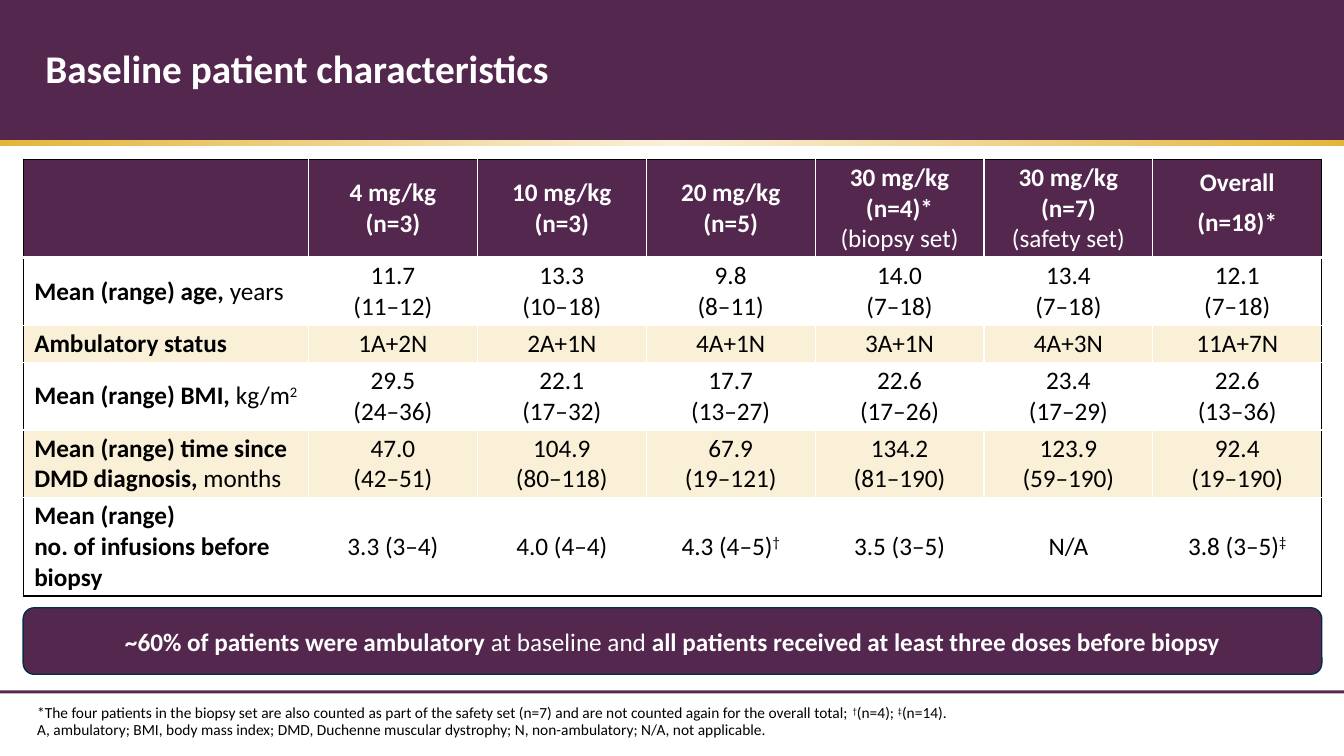
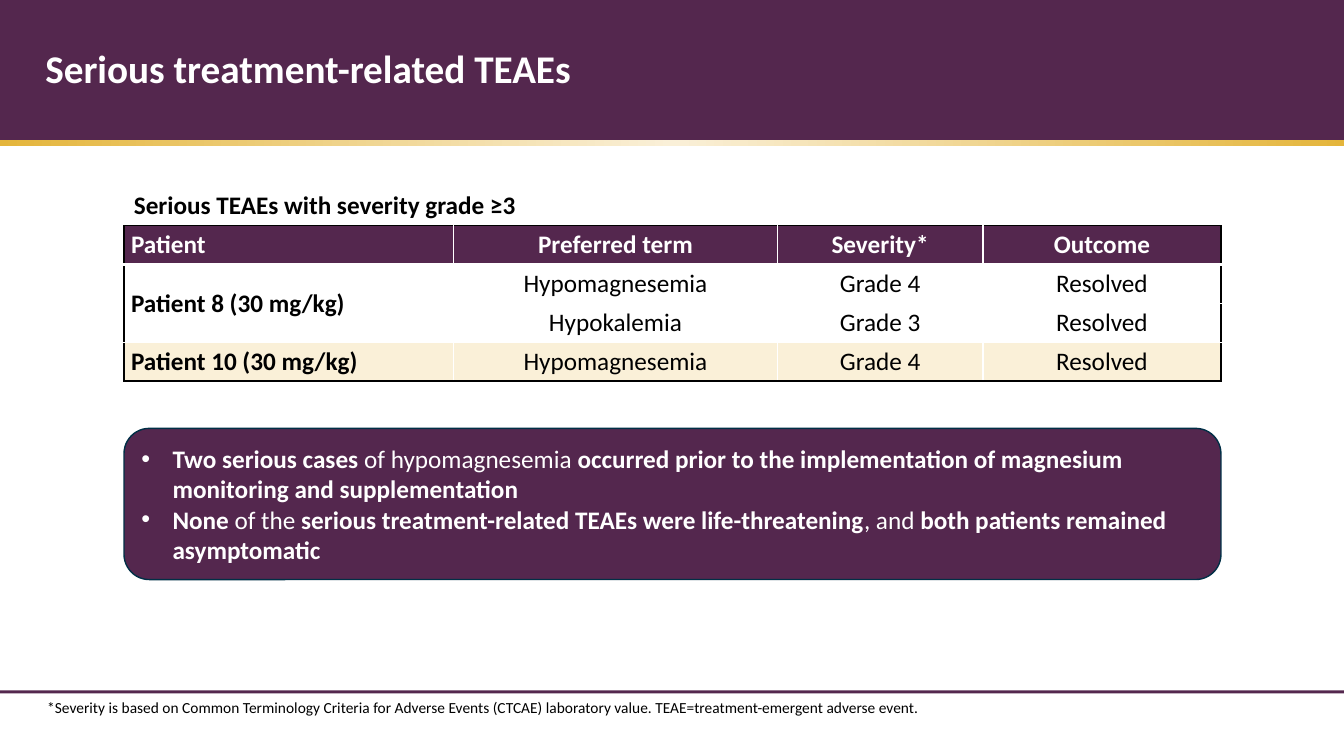
"""Build two clinical trial slides: baseline characteristics and serious adverse events."""
from copy import deepcopy
from dataclasses import dataclass

from pptx import Presentation
from pptx.dml.color import RGBColor
from pptx.enum.shapes import MSO_SHAPE
from pptx.enum.text import MSO_ANCHOR, MSO_AUTO_SIZE, PP_ALIGN
from pptx.oxml import parse_xml
from pptx.oxml.ns import nsdecls, qn
from pptx.util import Inches, Pt

PLUM, CREAM, GOLD, NAVY = "54274E", "FAF0D8", "E4B53B", "002F46"
WHITE, BLACK = "FFFFFF", "000000"
FONT = "Calibri"
SLIDE_WIDTH, SLIDE_HEIGHT = 13.33, 7.5


@dataclass(frozen=True)
class Box:
    left: float
    top: float
    width: float
    height: float

    def lengths(self) -> tuple:
        return tuple(Inches(n) for n in (self.left, self.top, self.width, self.height))


@dataclass(frozen=True)
class TableSpec:
    box: Box
    columns: list[float]
    heights: list[float]
    rows: list[list[str]]
    tinted_rows: set[int]
    side_margin: float
    end_margin: float


PATIENT_TABLE = TableSpec(
    box=Box(0.23, 1.58, 12.88, 4.33),
    columns=[2.83] + [(12.88 - 2.83) / 6] * 6,
    heights=[0.97, 0.67, 0.37, 0.67, 0.67, 0.97],
    rows=[
        ["", "|4 mg/kg\n|(n=3)", "|10 mg/kg\n|(n=3)", "|20 mg/kg\n|(n=5)",
         "|30 mg/kg\n|(n=4)*\n(biopsy set)", "|30 mg/kg\n|(n=7)\n(safety set)", "|Overall\n|(n=18)*"],
        ["|Mean (range) age, |years", "11.7\n(11–12)", "13.3\n(10–18)", "9.8\n(8–11)",
         "14.0\n(7–18)", "13.4\n(7–18)", "12.1\n(7–18)"],
        ["|Ambulatory status", "1A+2N", "2A+1N", "4A+1N", "3A+1N", "4A+3N", "11A+7N"],
        ["|Mean (range) BMI, |kg/m^2^", "29.5\n(24–36)", "22.1\n(17–32)", "17.7\n(13–27)",
         "22.6\n(17–26)", "23.4\n(17–29)", "22.6\n(13–36)"],
        ["|Mean (range) time since DMD diagnosis, |months", "47.0\n(42–51)", "104.9\n(80–118)",
         "67.9\n(19–121)", "134.2\n(81–190)", "123.9\n(59–190)", "92.4\n(19–190)"],
        ["|Mean (range)\n|no. of infusions before biopsy", "3.3 (3–4)", "4.0 (4–4)",
         "4.3 (4–5)^†^", "3.5 (3–5)", "N/A", "3.8 (3–5)^‡^"],
    ],
    tinted_rows={2, 4},
    side_margin=0.11,
    end_margin=0.03,
)

EVENT_TABLE = TableSpec(
    box=Box(1.23, 2.24, 10.88, 1.52),
    columns=[3.27, 3.21, 2.04, 2.36],
    heights=[0.38] * 4,
    rows=[
        ["|Patient", "|Preferred term", "|Severity*", "|Outcome"],
        ["|Patient 8 (30 mg/kg)", "Hypomagnesemia", "Grade 4", "Resolved"],
        ["", "Hypokalemia", "Grade 3", "Resolved"],
        ["|Patient 10 (30 mg/kg)", "Hypomagnesemia", "Grade 4", "Resolved"],
    ],
    tinted_rows={3},
    side_margin=0.07,
    end_margin=0.04,
)


def color(value: str) -> RGBColor:
    """Turn a hex string into a colour."""
    return RGBColor.from_string(value)


def add_bullet(paragraph, indent: float = 0.31) -> None:
    """Give a paragraph a round bullet and a hanging indent."""
    properties = paragraph._p.get_or_add_pPr()
    properties.set("marL", str(Inches(indent)))
    properties.set("indent", str(-Inches(indent)))
    properties.append(parse_xml(f'<a:buFont {nsdecls("a")} typeface="Arial"/>'))
    properties.append(parse_xml(f'<a:buChar {nsdecls("a")} char="•"/>'))


def write_text(text_frame, text: str, *, size: float = 18, fill: str = BLACK,
               align=PP_ALIGN.LEFT, anchor=MSO_ANCHOR.TOP, line_spacing=None,
               gap: float = 0, bullets: bool = False) -> None:
    """Write paragraphs in which | toggles bold and ^ toggles superscript."""
    text_frame.clear()
    text_frame.word_wrap = True
    text_frame.vertical_anchor = anchor
    for index, line in enumerate(text.split("\n")):
        paragraph = text_frame.add_paragraph() if index else text_frame.paragraphs[0]
        if bullets:
            add_bullet(paragraph)
        paragraph.alignment = align
        paragraph.line_spacing = line_spacing
        if index and gap:
            paragraph.space_before = Pt(gap)
        for bold_index, part in enumerate(line.split("|")):
            for raised_index, piece in enumerate(part.split("^")):
                if not piece:
                    continue
                run = paragraph.add_run()
                run.text = piece
                run.font.name = FONT
                run.font.size = Pt(size)
                run.font.bold = bold_index % 2 == 1
                run.font.color.rgb = color(fill)
                if raised_index % 2:
                    run._r.get_or_add_rPr().set("baseline", "30000")


def add_text_box(slide, box: Box, text: str, **text_format) -> None:
    """Add a wrapping text box."""
    write_text(slide.shapes.add_textbox(*box.lengths()).text_frame, text, **text_format)


def add_block(slide, box: Box, kind=MSO_SHAPE.RECTANGLE, line: str | None = None):
    """Add a flat plum shape, outlined if a line colour is given."""
    shape = slide.shapes.add_shape(kind, *box.lengths())
    shape.shadow.inherit = False
    shape.fill.solid()
    shape.fill.fore_color.rgb = color(PLUM)
    if line:
        shape.line.color.rgb = color(line)
        shape.line.width = Pt(1)
    else:
        shape.line.fill.background()
    return shape


def add_callout(slide, box: Box, text: str, **text_format) -> None:
    """Add a rounded plum box with white text."""
    callout = add_block(slide, box, MSO_SHAPE.ROUNDED_RECTANGLE, NAVY)
    write_text(callout.text_frame, text, fill=WHITE, anchor=MSO_ANCHOR.MIDDLE, **text_format)


def fill_gold_gradient(shape) -> None:
    """Fill a shape with gold that fades to cream in the middle."""
    shape.fill.gradient()
    shape.fill.gradient_angle = 0
    stop_list = next(shape.element.iter(qn("a:gsLst")))
    stop_list.append(deepcopy(stop_list[0]))
    for stop, position, value in zip(shape.fill.gradient_stops, (0, 0.5, 1), (GOLD, CREAM, GOLD)):
        stop.position = position
        stop.color.rgb = color(value)


def draw_shared_bands(slide) -> None:
    """Put the header, gold strip and footer rule on the slide's layout."""
    header = add_block(slide, Box(0, 0, SLIDE_WIDTH, 1.4))
    strip = add_block(slide, Box(0, 1.39, SLIDE_WIDTH, 0.06))
    fill_gold_gradient(strip)
    footer_rule = add_block(slide, Box(0, 6.85, SLIDE_WIDTH, 0.03))
    for position, shape in enumerate((header, strip, footer_rule), start=2):
        slide.slide_layout.shapes.element.insert(position, shape.element)


def add_titled_slide(presentation, title: str):
    """Add a title-only slide with a white title."""
    slide = presentation.slides.add_slide(presentation.slide_layouts[5])
    placeholder = slide.shapes.title
    placeholder.left, placeholder.top, placeholder.width, placeholder.height = Box(
        0.37, 0.41, 12.6, 0.58).lengths()
    text_frame = placeholder.text_frame
    text_frame.auto_size = MSO_AUTO_SIZE.NONE
    text_frame.margin_left = text_frame.margin_right = Inches(0.08)
    text_frame.margin_top = text_frame.margin_bottom = Inches(0.08)
    write_text(text_frame, f"|{title}", size=28, fill=WHITE,
               anchor=MSO_ANCHOR.MIDDLE, line_spacing=0.9)
    return slide


def set_border(cell, side: str, value: str, width: float = 1) -> None:
    """Draw one border of a cell."""
    cell._tc.get_or_add_tcPr().append(parse_xml(
        f'<a:ln{side} {nsdecls("a")} w="{Pt(width)}"><a:solidFill>'
        f'<a:srgbClr val="{value}"/></a:solidFill></a:ln{side}>'))


def add_table(slide, spec: TableSpec):
    """Add a table with a plum header, white inner lines and a black frame."""
    last_row, last_column = len(spec.rows) - 1, len(spec.columns) - 1
    table = slide.shapes.add_table(last_row + 1, last_column + 1, *spec.box.lengths()).table
    table.horz_banding = False
    for column, width in zip(table.columns, spec.columns):
        column.width = Inches(width)
    for row_index, texts in enumerate(spec.rows):
        table.rows[row_index].height = Inches(spec.heights[row_index])
        is_header = row_index == 0
        background = PLUM if is_header else CREAM if row_index in spec.tinted_rows else WHITE
        for column_index, text in enumerate(texts):
            cell = table.cell(row_index, column_index)
            set_border(cell, "L", WHITE if column_index else BLACK)
            set_border(cell, "R", BLACK if column_index == last_column else WHITE)
            set_border(cell, "T", BLACK if is_header else WHITE, 3 if row_index == 1 else 1)
            set_border(cell, "B", BLACK if row_index == last_row else WHITE, 3 if is_header else 1)
            cell.fill.solid()
            cell.fill.fore_color.rgb = color(background)
            cell.margin_left = cell.margin_right = Inches(spec.side_margin)
            cell.margin_top = cell.margin_bottom = Inches(spec.end_margin)
            cell.vertical_anchor = MSO_ANCHOR.MIDDLE
            write_text(cell.text_frame, text, fill=WHITE if is_header else BLACK,
                       align=PP_ALIGN.CENTER if column_index else PP_ALIGN.LEFT)
    return table


def build_baseline_slide(presentation) -> None:
    """Build the slide of baseline patient characteristics."""
    slide = add_titled_slide(presentation, "Baseline patient characteristics")
    draw_shared_bands(slide)
    add_callout(slide, Box(0.23, 6.03, 12.88, 0.66),
                "|~60% of patients were ambulatory |at baseline and "
                "|all patients received at least three doses before biopsy", align=PP_ALIGN.CENTER)
    table = add_table(slide, PATIENT_TABLE)
    write_text(table.cell(0, 6).text_frame, PATIENT_TABLE.rows[0][6], fill=WHITE,
               align=PP_ALIGN.CENTER, line_spacing=Pt(14), gap=14)
    add_text_box(slide, Box(0.27, 6.95, 9.87, 0.4),
                 "*The four patients in the biopsy set are also counted as part of the safety set (n=7) "
                 "and are not counted again for the overall total; ^†^(n=4); ^‡^(n=14).\n"
                 "A, ambulatory; BMI, body mass index; DMD, Duchenne muscular dystrophy; "
                 "N, non-ambulatory; N/A, not applicable.", size=11, line_spacing=0.9)


def build_events_slide(presentation) -> None:
    """Build the slide of serious treatment-related events."""
    slide = add_titled_slide(presentation, "Serious treatment-related TEAEs")
    add_callout(slide, Box(1.23, 4.25, 10.88, 1.5),
                "|Two serious cases |of hypomagnesemia |occurred prior to the implementation of "
                "magnesium monitoring and supplementation\n"
                "|None| of the |serious treatment-related TEAEs were life-threatening|, and "
                "|both patients remained asymptomatic", bullets=True)
    table = add_table(slide, EVENT_TABLE)
    table.cell(1, 0).merge(table.cell(2, 0))
    add_text_box(slide, Box(0.37, 6.88, 12.6, 0.29),
                 "*Severity is based on Common Terminology Criteria for Adverse Events (CTCAE) "
                 "laboratory value. TEAE=treatment-emergent adverse event.", size=11)
    add_text_box(slide, Box(1.23, 1.83, 8.11, 0.4), "|Serious TEAEs with severity grade ≥3")


def main() -> None:
    """Build and save the presentation."""
    presentation = Presentation()
    presentation.slide_width = Inches(SLIDE_WIDTH)
    presentation.slide_height = Inches(SLIDE_HEIGHT)
    build_baseline_slide(presentation)
    build_events_slide(presentation)
    presentation.save("out.pptx")


if __name__ == "__main__":
    main()
